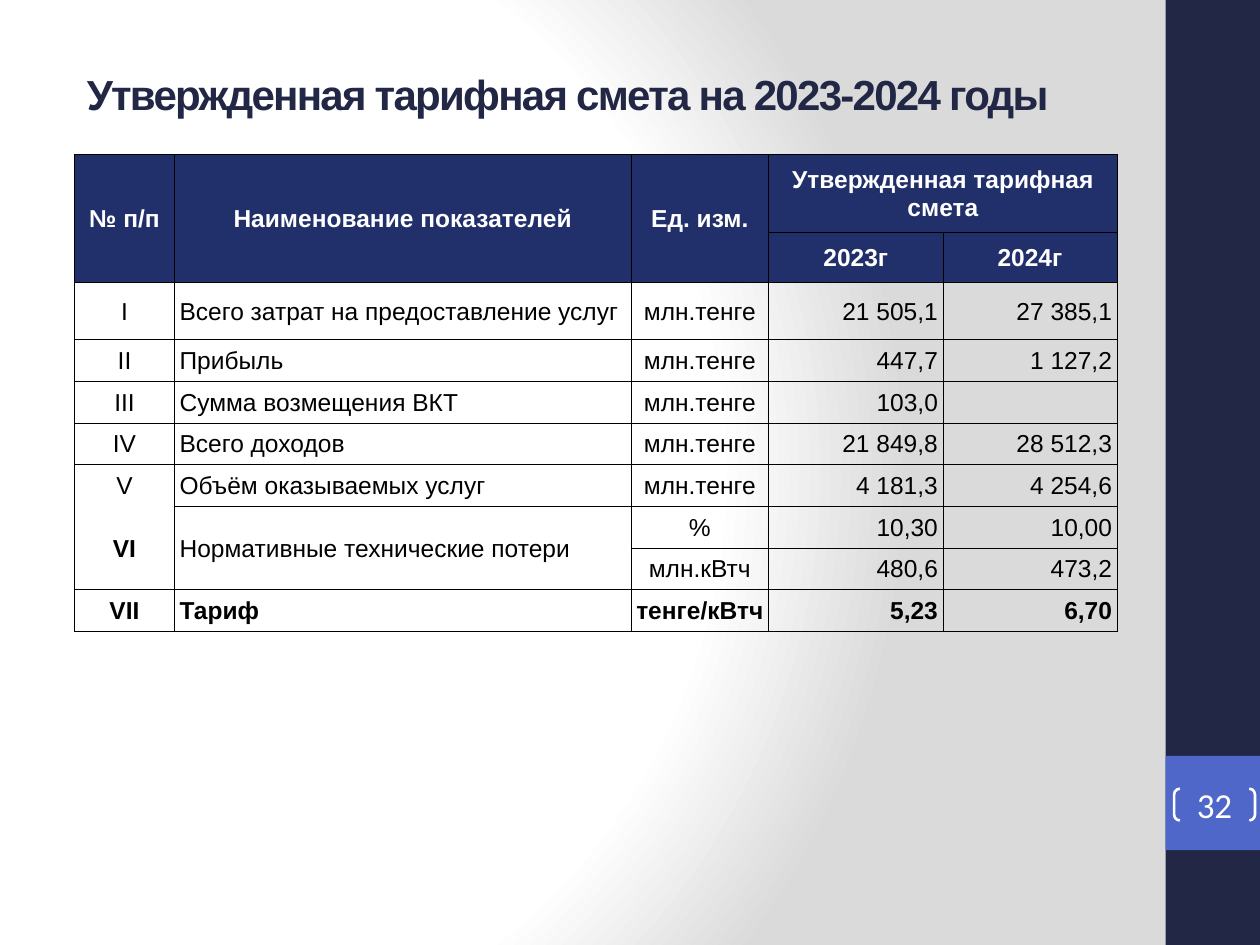
from lxml import etree
from pptx import Presentation
from pptx import util as u
from pptx.dml.color import RGBColor
from pptx.enum import shapes, text
from pptx.oxml import ns

# Content
TITLE = "Утвержденная тарифная смета на 2023-2024 годы"
PAGE = "32"
UNIT = "млн.тенге"
ROWS = [
    ("№ п/п", "Наименование показателей", "Ед. изм.", "Утвержденная тарифная смета", ""),
    ("", "", "", "2023г", "2024г"),
    ("I", "Всего затрат на предоставление услуг", UNIT, "21 505,1", "27 385,1"),
    ("II", "Прибыль", UNIT, "447,7", "1 127,2"),
    ("III", "Сумма возмещения ВКТ", UNIT, "103,0", ""),
    ("IV", "Всего доходов", UNIT, "21 849,8", "28 512,3"),
    ("V", "Объём оказываемых услуг", UNIT, "4 181,3", "4 254,6"),
    ("VI", "Нормативные технические потери", "%", "10,30", "10,00"),
    ("", "", "млн.кВтч", "480,6", "473,2"),
    ("VII", "Тариф", "тенге/кВтч", "5,23", "6,70"),
]
HEAD = 2                      # heading rows
BOLD = {(7, 0)} | {(9, c) for c in range(5)}
OPEN = {(6, 0, "B"), (7, 0, "T")}    # cell sides without a line
SPANS = [(0, 0, 1, 0), (0, 1, 1, 1), (0, 2, 1, 2), (0, 3, 0, 4),
         (7, 0, 8, 0), (7, 1, 8, 1)]
WIDE = [2.02, 9.2, 2.78, 3.51, 3.51]
HIGH = [1.57, 1.01, 1.15] + [0.84] * 7
NAVY, BLUE, DARK, WHITE, BLACK = "212745", "4E67C8", "21306A", "FFFFFF", "000000"
STOPS = [(0, WHITE), (75, WHITE), (100, "DADADA")]
FOCUS = {"l": 20, "t": 50, "r": 100, "b": 50}

AL, MID = text.PP_ALIGN, text.MSO_ANCHOR.MIDDLE
SIDES = [AL.CENTER, AL.LEFT, AL.CENTER, AL.RIGHT, AL.RIGHT]


def rgb(code):
    return RGBColor.from_string(code)


def put(obj, **vals):
    for key, val in vals.items():
        setattr(obj, key, val)


def sub(node, tag, **vals):
    return etree.SubElement(node, ns.qn("a:" + tag), {k: str(v) for k, v in vals.items()})


def write(frame, words, color, align, **form):
    para = frame.paragraphs[0]
    para.alignment = align
    run = para.add_run()
    run.text = words
    put(run.font, **form)
    run.font.color.rgb = rgb(color)
    return run


def pads(left, top, right, low):
    names = ("margin_left", "margin_top", "margin_right", "margin_bottom")
    return dict(zip(names, map(u.Cm, (left, top, right, low))))


def block(kind, *box, fill=None):
    item = slide.shapes.add_shape(kind, *map(u.Cm, box))
    item.shadow.inherit = False
    if fill:
        item.fill.solid()
        item.fill.fore_color.rgb = rgb(fill)
        item.line.fill.background()
    else:
        item.fill.background()
    return item


def edge(cell, row, col):
    props = cell._tc.get_or_add_tcPr()
    for spot, side in enumerate("LRTB"):
        line = etree.Element(ns.qn("a:ln" + side), w=str(u.Pt(0.5)))
        if (row, col, side) in OPEN:
            sub(line, "noFill")
        else:
            sub(sub(line, "solidFill"), "srgbClr", val=BLACK)
        props.insert(spot, line)


deck = Presentation()
put(deck, slide_width=u.Cm(25.4), slide_height=u.Cm(19.05))
slide = deck.slides.add_slide(deck.slide_layouts[6])

# Background glow
slide.background.fill.gradient()
grad = slide._element.find(".//" + ns.qn("a:gradFill"))
for kid in list(grad):
    grad.remove(kid)
stops = sub(grad, "gsLst")
for pos, code in STOPS:
    sub(sub(stops, "gs", pos=pos * 1000), "srgbClr", val=code)
sub(sub(grad, "path", path="circle"), "fillToRect",
    **{k: v * 1000 for k, v in FOCUS.items()})

# Side band and page number
rect = shapes.MSO_SHAPE.RECTANGLE
block(rect, 23.5, 0, 1.9, 19.05, fill=NAVY)
block(rect, 23.5, 15.24, 1.9, 1.9, fill=BLUE)
page = block(shapes.MSO_SHAPE.DOUBLE_BRACKET, 23.67, 15.9, 1.63, 0.64)
page.adjustments[0] = 0.18
page.line.color.rgb = rgb(WHITE)
page.line.width = u.Pt(1.5)
put(page.text_frame, vertical_anchor=MID, word_wrap=True, **pads(0, 0, 0, 0))
write(page.text_frame, PAGE, WHITE, AL.CENTER, name="Calibri", size=u.Pt(20))

# Title
head = slide.shapes.add_textbox(*map(u.Cm, (1.5, 1.32, 20.4, 1.12))).text_frame
put(head, vertical_anchor=MID, word_wrap=True)
run = write(head, TITLE, NAVY, AL.LEFT, name="Arial", size=u.Pt(24), bold=True)
run.font._element.set("spc", "-100")

# Table
table = slide.shapes.add_table(len(ROWS), len(WIDE), u.Cm(1.5), u.Cm(3.12),
                               u.Cm(sum(WIDE)), u.Cm(sum(HIGH))).table
put(table, first_row=False, horz_banding=False)
for col, size in zip(table.columns, WIDE):
    col.width = u.Cm(size)
for row, size in zip(table.rows, HIGH):
    row.height = u.Cm(size)
for r, line in enumerate(ROWS):
    top = r < HEAD
    for c, words in enumerate(line):
        cell = table.cell(r, c)
        align = AL.CENTER if top else SIDES[c]
        left = 0.1 if align == AL.LEFT else 0.02
        right = 0.1 if align == AL.RIGHT else 0.02
        put(cell, vertical_anchor=MID, **pads(left, 0.02, right, 0))
        if top:
            cell.fill.solid()
            cell.fill.fore_color.rgb = rgb(DARK)
        else:
            cell.fill.background()
        edge(cell, r, c)
        if words:
            write(cell.text_frame, words, WHITE if top else BLACK, align,
                  name="Arial", size=u.Pt(14), bold=top or (r, c) in BOLD)
for r, c, last, end in SPANS:
    table.cell(r, c).merge(table.cell(last, end))

deck.save("out.pptx")
